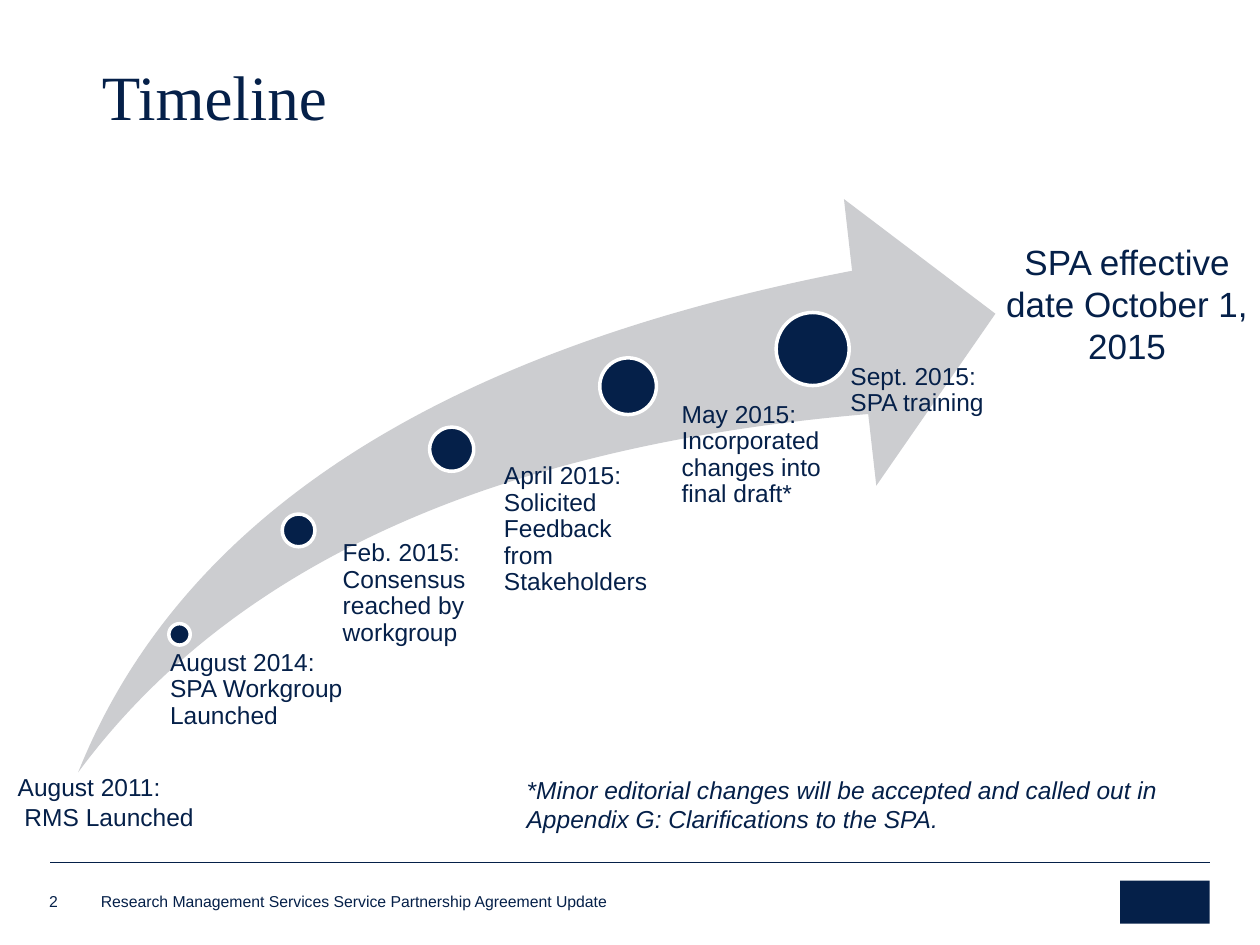
from pptx import Presentation
from pptx.dml.color import RGBColor
from pptx.enum.shapes import MSO_CONNECTOR, MSO_SHAPE
from pptx.enum.text import MSO_ANCHOR, PP_ALIGN
from pptx.oxml.ns import qn
from pptx.util import Inches, Pt
from lxml.etree import SubElement

NAVY = RGBColor(0x05, 0x20, 0x49)
GREY = RGBColor(0xCC, 0xCD, 0xD0)
WHITE = RGBColor(0xFF, 0xFF, 0xFF)

# dot left, top, diameter; label left, top, width, height, inset; wording
MILESTONES = [
    ((1.34, 4.95, 0.17), (1.26, 5.16, 1.63, 1.08), 0.09,
     "August 2014: SPA Workgroup Launched"),
    ((2.24, 4.08, 0.26), (2.58, 4.29, 1.32, 1.91), 0.14,
     "Feb. 2015: Consensus reached by workgroup"),
    ((3.41, 3.39, 0.35), (3.81, 3.68, 1.43, 2.56), 0.19,
     "April 2015: Solicited Feedback from Stakeholders"),
    ((4.76, 2.84, 0.45), (5.17, 3.19, 1.46, 3.05), 0.24,
     "May 2015: Incorporated changes into final draft*"),
    ((6.16, 2.48, 0.58), (6.45, 2.89, 1.46, 3.35), 0.3,
     "Sept. 2015: SPA training"),
]


def add_text(s, box, lines, size=14, font="Arial", left=0, spacing=None,
             anchor=MSO_ANCHOR.TOP, align=PP_ALIGN.LEFT, italic=False):
    tf = s.shapes.add_textbox(*map(Inches, box)).text_frame
    tf.word_wrap = True
    tf.vertical_anchor = anchor
    tf.margin_left = Inches(left)
    tf.margin_top = tf.margin_right = tf.margin_bottom = 0
    for i, line in enumerate(lines):
        p = tf.paragraphs[0] if i == 0 else tf.add_paragraph()
        p.text = line
        p.alignment = align
        p.line_spacing = spacing
        p.font.size = Pt(size)
        p.font.name = font
        p.font.italic = italic
        p.font.color.rgb = NAVY


def add_filled(s, kind, box, fill, line=None):
    sp = s.shapes.add_shape(kind, *map(Inches, box))
    sp.shadow.inherit = False
    sp.fill.solid()
    sp.fill.fore_color.rgb = fill
    if line is None:
        sp.line.fill.background()
    else:
        sp.line.color.rgb = line
        sp.line.width = Pt(2)
    return sp


def add_milestone(s, dot, label, inset, text):
    x, y, d = dot
    add_filled(s, MSO_SHAPE.OVAL, (x, y, d, d), NAVY, WHITE)
    add_text(s, label, [text], left=inset, spacing=0.9)


def add_footer(s):
    rule = s.shapes.add_connector(MSO_CONNECTOR.STRAIGHT, Inches(0.4), Inches(6.84),
                                  Inches(9.6), Inches(6.84))
    rule.line.color.rgb = NAVY
    rule.line.width = Pt(0.25)
    SubElement(rule._element.spPr, qn("a:effectLst"))
    add_filled(s, MSO_SHAPE.RECTANGLE, (8.89, 6.99, 0.71, 0.34), NAVY)
    add_text(s, (0.8, 7.08, 4.71, 0.15),
             ["Research Management Services Service Partnership Agreement Update"],
             size=9, anchor=MSO_ANCHOR.BOTTOM)
    add_text(s, (0.39, 7.06, 0.27, 0.17), ["2"], size=9, anchor=MSO_ANCHOR.BOTTOM)


def main():
    prs = Presentation()
    prs.slide_width, prs.slide_height = Inches(10), Inches(7.5)
    s = prs.slides.add_slide(prs.slide_layouts[6])
    add_footer(s)
    add_text(s, (0.71, 0.48, 8.85, 0.58), ["Timeline"], size=36,
             font="Times New Roman", left=0.1, spacing=0.85,
             anchor=MSO_ANCHOR.BOTTOM)
    arrow = add_filled(s, MSO_SHAPE.SWOOSH_ARROW, (0.62, 1.58, 7.28, 4.55), GREY)
    arrow.adjustments[0] = arrow.adjustments[1] = 0.25
    for milestone in MILESTONES:
        add_milestone(s, *milestone)
    add_text(s, (7.89, 1.91, 2.11, 1.01), ["SPA effective date October 1, 2015"],
             size=20, align=PP_ALIGN.CENTER)
    add_text(s, (0.14, 6.13, 1.89, 0.47), ["August 2011:", " RMS Launched"])
    add_text(s, (4.18, 6.15, 5.06, 0.47),
             ["*Minor editorial changes will be accepted and called out in "
              "Appendix G: Clarifications to the SPA."], italic=True)
    prs.save("out.pptx")


if __name__ == "__main__":
    main()
